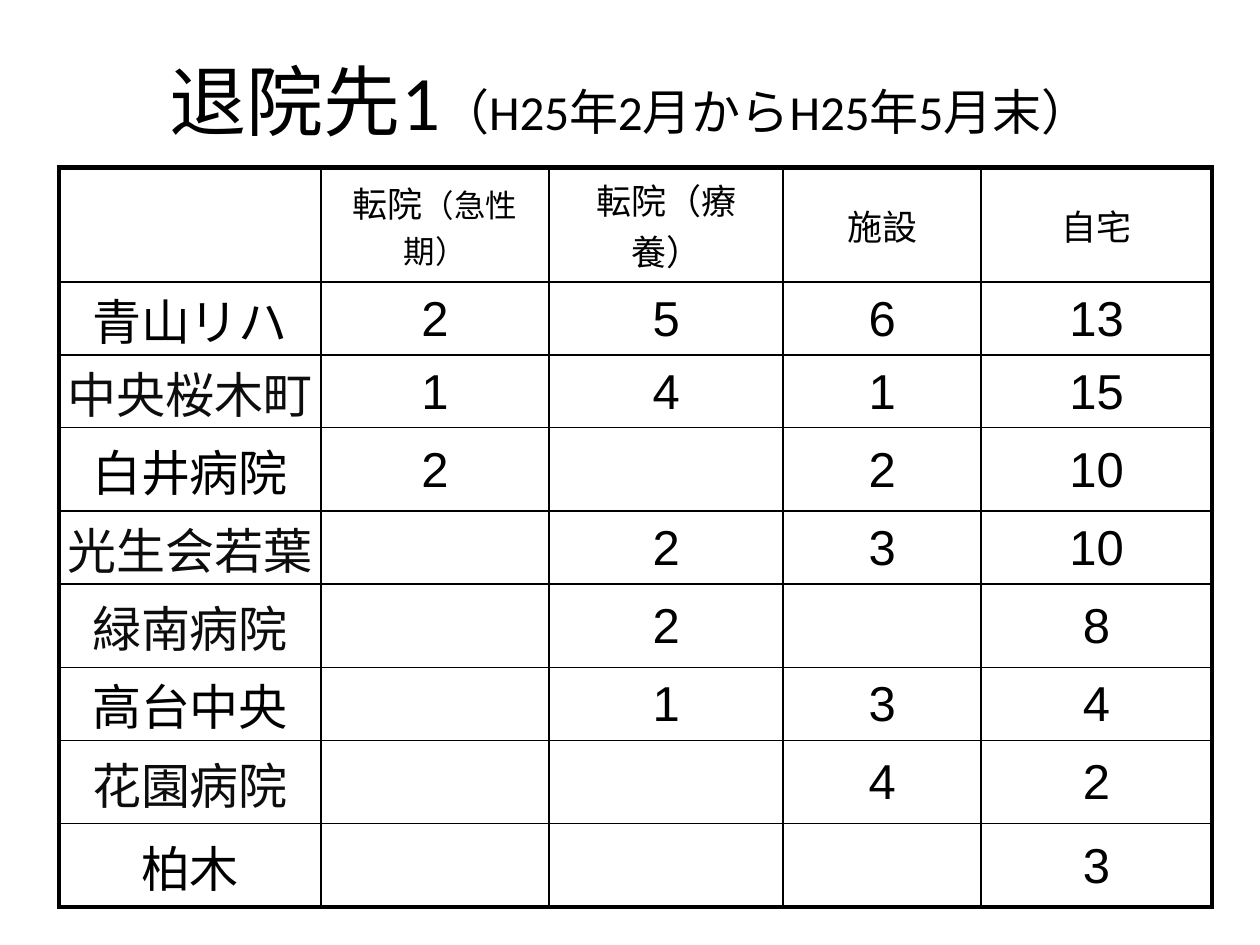
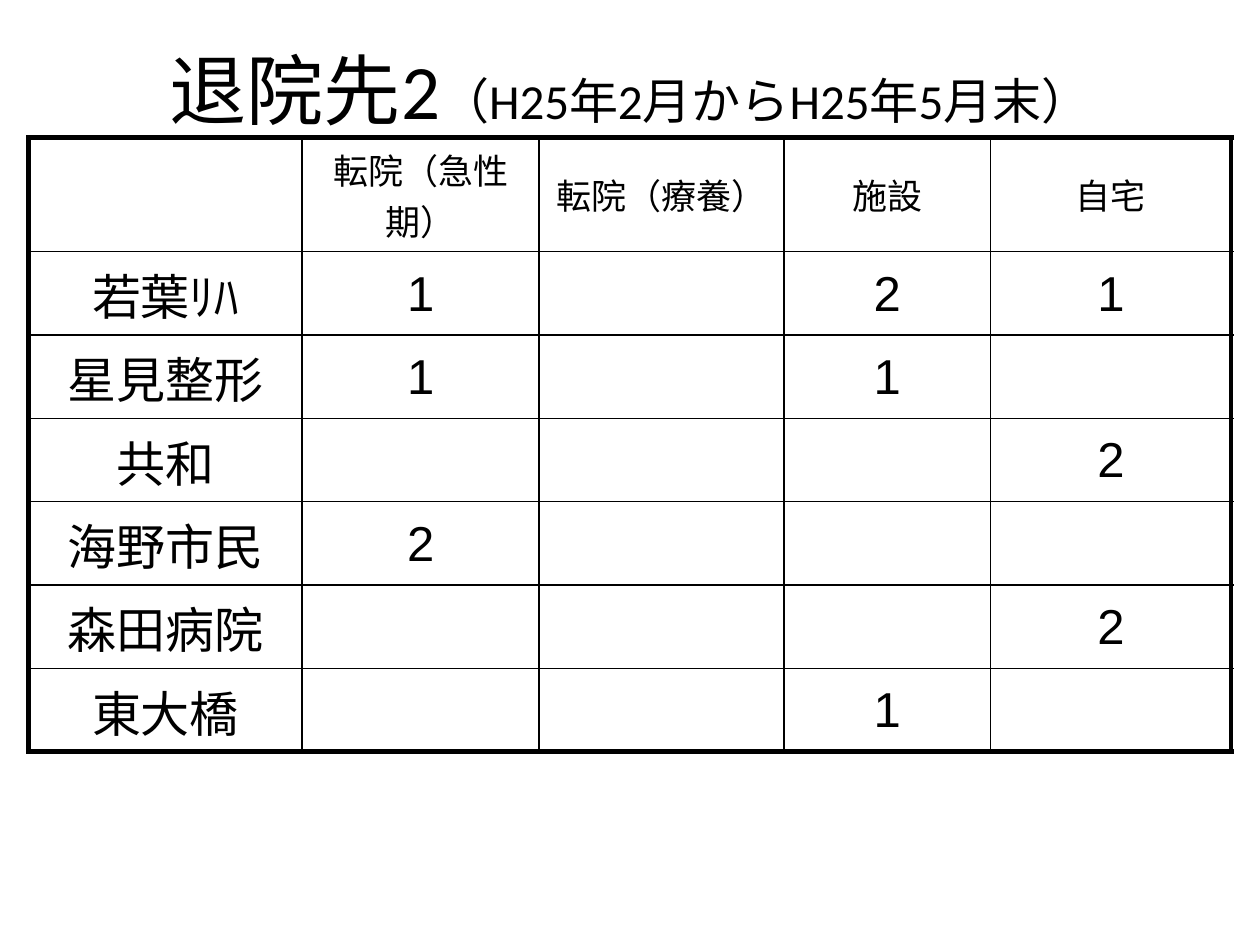
from dataclasses import dataclass

from lxml import etree
from pptx import Presentation
from pptx.dml.color import RGBColor
from pptx.enum.text import MSO_ANCHOR, PP_ALIGN
from pptx.oxml.ns import qn
from pptx.util import Cm, Pt

CENTER = PP_ALIGN.CENTER
MIDDLE = MSO_ANCHOR.MIDDLE

BLACK = "000000"
SOFT_BLACK = "0D0D0D"
TITLE_FONT = "Calibri"
TABLE_FONT = "Arial"
LABEL_FONT = "Noto Sans CJK JP"
PERIOD = "（H25年2月からH25年5月末）"
HEADER_HEIGHT = 2.3
LOW_ROW = 1.47
TALL_ROW = 1.68
OUTER_LINE = 3
INNER_LINE = 1


@dataclass
class Hospital:
    name: str
    counts: tuple[str, str, str, str]
    height: float = TALL_ROW
    color: str = BLACK


@dataclass
class DischargePage:
    title: str
    title_top: float
    left: float
    top: float
    widths: tuple[float, ...]
    acute_size: int
    label_font: str
    hospitals: list[Hospital]


PAGES = [
    DischargePage(
        "退院先1", 0.41, 1.19, 3.38, (5.28, 4.6, 4.72, 3.99, 4.65), 18, TABLE_FONT,
        [
            Hospital("青山リハ", ("2", "5", "6", "13"), LOW_ROW),
            Hospital("中央桜木町", ("1", "4", "1", "15"), LOW_ROW, SOFT_BLACK),
            Hospital("白井病院", ("2", "", "2", "10")),
            Hospital("光生会若葉", ("", "2", "3", "10"), LOW_ROW, SOFT_BLACK),
            Hospital("緑南病院", ("", "2", "", "8"), TALL_ROW, SOFT_BLACK),
            Hospital("高台中央", ("", "1", "3", "4"), LOW_ROW),
            Hospital("花園病院", ("", "", "4", "2"), TALL_ROW, SOFT_BLACK),
            Hospital("柏木", ("", "", "", "3")),
        ],
    ),
    DischargePage(
        "退院先2", 0.2, 0.58, 2.77, (5.51, 4.78, 4.93, 4.17, 4.85), 20, LABEL_FONT,
        [
            Hospital("若葉ﾘﾊ", ("1", "", "2", "1")),
            Hospital("星見整形", ("1", "", "1", "")),
            Hospital("共和", ("", "", "", "2")),
            Hospital("海野市民", ("2", "", "", "")),
            Hospital("森田病院", ("", "", "", "2")),
            Hospital("東大橋", ("", "", "1", "")),
        ],
    ),
]


def rgb(value: str) -> RGBColor:
    return RGBColor.from_string(value)


def style_span(span, size: int, font: str, color: str = BLACK) -> None:
    span.font.size = Pt(size)
    span.font.name = font
    span.font.color.rgb = rgb(color)


def add_title(page, spec: DischargePage) -> None:
    title = page.shapes.title
    title.left, title.top = Cm(1.27), Cm(spec.title_top)
    title.width, title.height = Cm(22.86), Cm(3.18)
    title.text_frame.vertical_anchor = MIDDLE
    para = title.text_frame.paragraphs[0]
    para.text = spec.title
    para.alignment = CENTER
    para.add_run().text = PERIOD
    for span, size in zip(para.runs, (44, 28)):
        style_span(span, size, TITLE_FONT)


def set_borders(cell, widths: dict[str, int]) -> None:
    properties = cell._tc.get_or_add_tcPr()
    for index, (side, width) in enumerate(widths.items()):
        line = etree.Element(qn(f"a:{side}"), w=str(Pt(width)))
        fill = etree.SubElement(line, qn("a:solidFill"))
        etree.SubElement(fill, qn("a:srgbClr"), val=BLACK)
        properties.insert(index, line)


def fill_cell(cell, parts: list[tuple[str, int]], font: str, color: str) -> None:
    para = cell.text_frame.paragraphs[0]
    para.alignment = CENTER
    for text, size in parts:
        span = para.add_run()
        span.text = text
        style_span(span, size, font, color)


def add_discharge_table(page, spec: DischargePage) -> None:
    heights = [HEADER_HEIGHT] + [hospital.height for hospital in spec.hospitals]
    table = page.shapes.add_table(
        len(heights), len(spec.widths), Cm(spec.left), Cm(spec.top),
        Cm(sum(spec.widths)), Cm(sum(heights)),
    ).table
    table.first_row = table.horz_banding = False
    for column, width in zip(table.columns, spec.widths):
        column.width = Cm(width)
    for row, height in zip(table.rows, heights):
        row.height = Cm(height)

    last_row, last_column = len(heights) - 1, len(spec.widths) - 1
    for r, row in enumerate(table.rows):
        for c, cell in enumerate(row.cells):
            cell.fill.background()
            cell.vertical_anchor = MIDDLE
            if r > 0:
                cell.margin_left = cell.margin_right = cell.margin_top = Cm(0.03)
                cell.margin_bottom = Cm(0)
            edges = {"lnL": c == 0, "lnR": c == last_column,
                     "lnT": r == 0, "lnB": r == last_row}
            set_borders(cell, {side: OUTER_LINE if outer else INNER_LINE
                               for side, outer in edges.items()})

    headers = [
        [("転院", 20), ("（急性期）", spec.acute_size)],
        [("転院（療養）", 20)],
        [("施設", 20)],
        [("自宅", 20)],
    ]
    for c, parts in enumerate(headers, start=1):
        fill_cell(table.cell(0, c), parts, TABLE_FONT, BLACK)
    for r, hospital in enumerate(spec.hospitals, start=1):
        fill_cell(table.cell(r, 0), [(hospital.name, 28)], spec.label_font, hospital.color)
        for c, count in enumerate(hospital.counts, start=1):
            if count:
                fill_cell(table.cell(r, c), [(count, 28)], TABLE_FONT, BLACK)


def main() -> None:
    deck = Presentation()
    deck.slide_width, deck.slide_height = Cm(25.4), Cm(19.05)
    for spec in PAGES:
        page = deck.slides.add_slide(deck.slide_layouts[5])
        add_title(page, spec)
        add_discharge_table(page, spec)
    deck.save("out.pptx")


if __name__ == "__main__":
    main()
